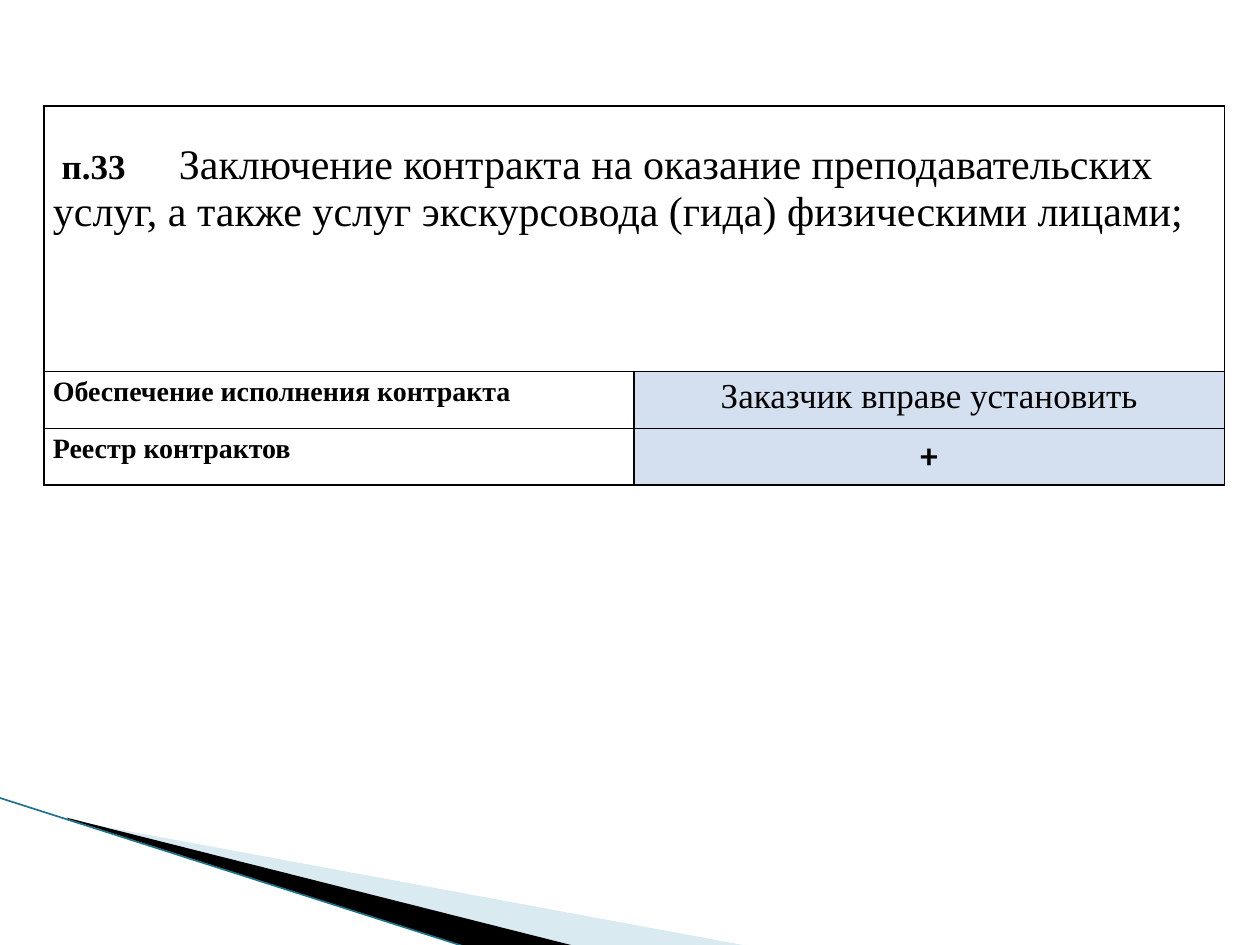
from lxml import etree
from pptx import Presentation
from pptx.dml.color import RGBColor
from pptx.enum.shapes import MSO_CONNECTOR
from pptx.enum.text import PP_ALIGN
from pptx.oxml.ns import qn
from pptx.util import Inches, Pt

LEFT, CENTER = PP_ALIGN.LEFT, PP_ALIGN.CENTER
STRAIGHT = MSO_CONNECTOR.STRAIGHT
SERIF, SANS = "Times New Roman", "Calibri"
BLACK, WHITE, PALE_BLUE = "000000", "FFFFFF", "D4DFEF"


def color(value):
    return RGBColor.from_string(value)


def add_span(para, text, **formats):
    span = para.add_run()
    span.text = text
    span.font.color.rgb = color(BLACK)
    for name, value in formats.items():
        setattr(span.font, name, value)


deck = Presentation()
deck.slide_width, deck.slide_height = Inches(10), Inches(7.5)
page = deck.slides.add_slide(deck.slide_layouts[6])

# Corner wedges: outline, fill, opacity in percent
wedges = [
    ([(0.55, 6.51), (5.95, 7.51), (4.56, 7.51), (0.55, 6.5)], "A0CBDC", 40),
    ([(0.53, 6.49), (4.57, 7.51), (3.72, 7.52), (0.54, 6.5)], BLACK, 100),
]
for points, fill, opacity in wedges:
    corners = [(Inches(x), Inches(y)) for x, y in points]
    builder = page.shapes.build_freeform(*corners[0])
    builder.add_line_segments(corners[1:], close=True)
    wedge = builder.convert_to_shape()
    wedge.shadow.inherit = False
    wedge.line.fill.background()
    wedge.fill.solid()
    wedge.fill.fore_color.rgb = color(fill)
    if opacity < 100:
        tint = wedge.fill._xPr.find(".//" + qn("a:srgbClr"))
        etree.SubElement(tint, qn("a:alpha"), val=str(opacity * 1000))

# Thin line along the wedges
edge = page.shapes.add_connector(
    STRAIGHT, Inches(-0.01), Inches(6.33), Inches(3.71), Inches(7.52))
edge.line.color.rgb = color("1F7388")
edge.line.width = Pt(0.95)
etree.SubElement(edge._element.spPr, qn("a:effectLst"))

# Table grid
table = page.shapes.add_table(
    3, 2, Inches(0.35), Inches(0.84), Inches(9.37), Inches(3.01)).table
table.first_row = table.horz_banding = False
for column, width in zip(table.columns, (4.68, 4.69)):
    column.width = Inches(width)
for row, height in zip(table.rows, (2.11, 0.45, 0.45)):
    row.height = Inches(height)
table.cell(0, 0).merge(table.cell(0, 1))

# Borders, margins and fills
for row_number in range(3):
    for column_number in range(2):
        cell = table.cell(row_number, column_number)
        properties = cell._tc.get_or_add_tcPr()
        for side in ("lnL", "lnR", "lnT", "lnB"):
            border = etree.SubElement(properties, qn("a:" + side), w=str(Pt(1)))
            paint = etree.SubElement(border, qn("a:solidFill"))
            etree.SubElement(paint, qn("a:srgbClr"), val=BLACK)
        cell.margin_left = cell.margin_right = Inches(0.07)
        cell.margin_top = cell.margin_bottom = 0
        cell.fill.solid()
        shaded = row_number > 0 and column_number == 1
        cell.fill.fore_color.rgb = color(PALE_BLUE if shaded else WHITE)

# Heading row: clause number, tab, clause text
heading = table.cell(0, 0)
heading.margin_top = Inches(0.29)
para = heading.text_frame.paragraphs[0]
settings = para._p.get_or_add_pPr()
settings.set("marL", "0")
settings.set("indent", str(Inches(0.07)))
tabs = etree.SubElement(settings, qn("a:tabLst"))
etree.SubElement(tabs, qn("a:tab"), pos=str(Inches(1)), algn="l")
add_span(para, "п.33\t", size=Pt(20), name=SERIF, bold=True)
add_span(para, "Заключение контракта на оказание преподавательских услуг, "
         "а также услуг экскурсовода (гида) физическими лицами;",
         size=Pt(24), name=SERIF, bold=False)

# Condition rows: label, value, value font, value bold
conditions = [
    ("Обеспечение исполнения контракта", "Заказчик вправе установить", SERIF, False),
    ("Реестр контрактов", "+", SANS, True),
]
for row_number, (label, value, font, bold) in enumerate(conditions, start=1):
    entries = [(label, LEFT, 16, SERIF, True), (value, CENTER, 20, font, bold)]
    for column_number, (text, align, size, name, weight) in enumerate(entries):
        para = table.cell(row_number, column_number).text_frame.paragraphs[0]
        para.alignment = align
        para.line_spacing = 1.15
        add_span(para, text, size=Pt(size), name=name, bold=weight)

deck.save("out.pptx")
